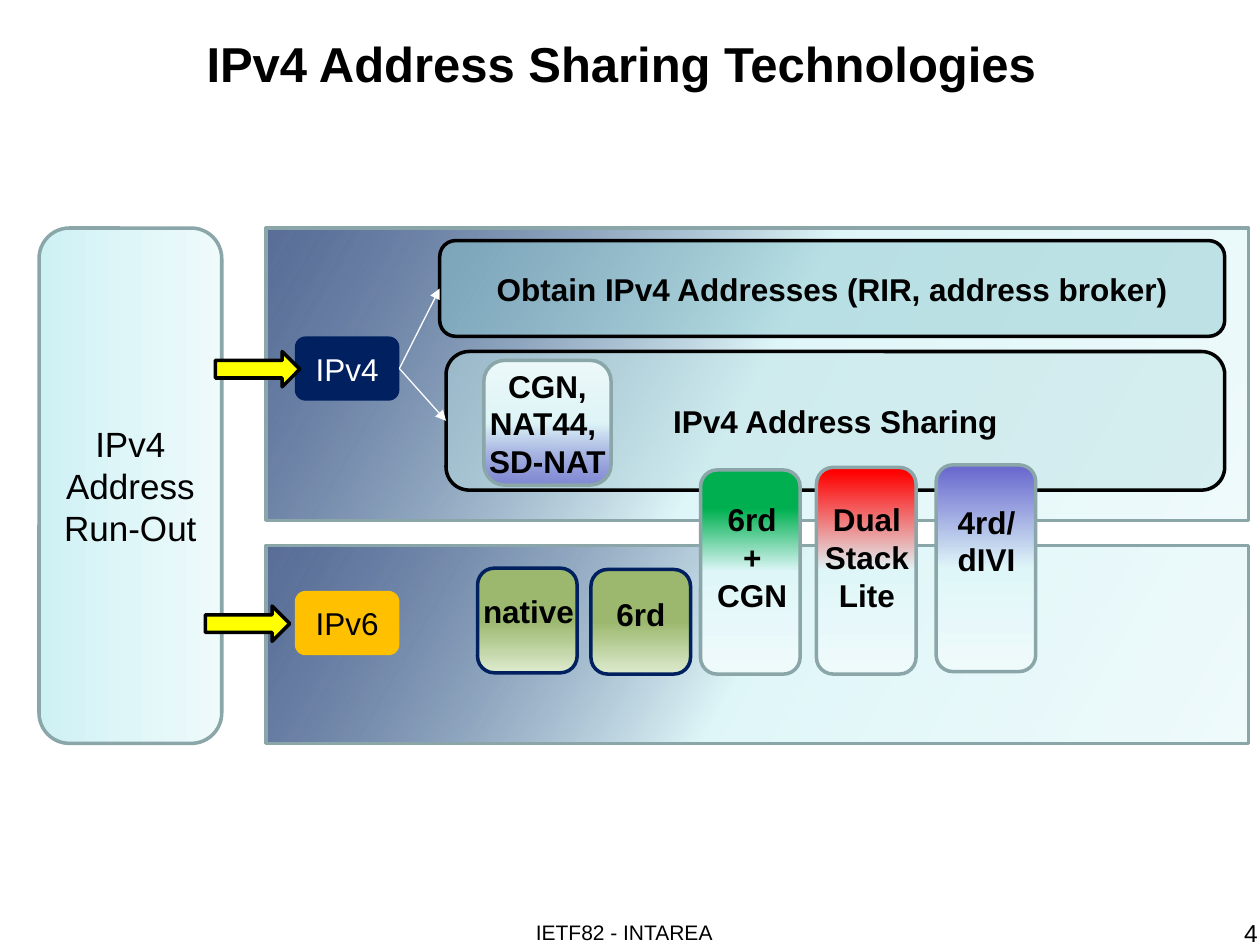
from lxml.etree import SubElement
from pptx import Presentation
from pptx.dml.color import RGBColor
from pptx.enum.shapes import MSO_CONNECTOR as CONN, MSO_SHAPE as SHAPE
from pptx.enum.text import MSO_ANCHOR as ANCHOR, PP_ALIGN as ALIGN
from pptx.oxml.ns import qn
from pptx.util import Inches, Pt

BLACK, WHITE, NAVY, YELLOW, EDGE = "000000", "FFFFFF", "002060", "FFFF00", "8AA6A8"
PALE = [(50, "DFF6F8"), (100, "EFFAFB")]
GREEN = [(50, "9CB86E"), (100, "DDEBCF"), (100, "156B13")]


def rgb(value):
    return RGBColor.from_string(value)


def set_alpha(color, percent):
    SubElement(color, qn("a:alpha"), val=str(percent * 1000))


class Deck:
    font = "Arial"
    border = 2

    def __init__(self, width, height):
        self.prs = Presentation()
        self.prs.slide_width, self.prs.slide_height = Inches(width), Inches(height)
        self.s = self.prs.slides.add_slide(self.prs.slide_layouts[6])

    def label(self, sp, text, size, bold, color=BLACK, align=ALIGN.CENTER,
              anchor=ANCHOR.MIDDLE, wrap=True):
        tf = sp.text_frame
        tf.word_wrap = wrap
        tf.vertical_anchor = anchor
        tf.text = text
        for p in tf.paragraphs:
            p.alignment = align
            p.font.name, p.font.size, p.font.bold = self.font, Pt(size), bold
            p.font.color.rgb = rgb(color)

    def text(self, at, text, size=18, bold=True, **style):
        sp = self.s.shapes.add_textbox(*map(Inches, at))
        self.label(sp, text, size, bold, **{"anchor": ANCHOR.TOP, **style})
        return sp

    def shape(self, at, line=None, kind=SHAPE.ROUNDED_RECTANGLE):
        sp = self.s.shapes.add_shape(kind, *map(Inches, at))
        sp.shadow.inherit = False
        if line:
            sp.line.color.rgb = rgb(line)
            sp.line.width = Pt(self.border)
        else:
            sp.line.fill.background()
        return sp

    def solid(self, at, fill, line=None, alpha=None, **kind):
        sp = self.shape(at, line, **kind)
        sp.fill.solid()
        sp.fill.fore_color.rgb = rgb(fill)
        if alpha:
            set_alpha(sp._element.spPr.find(qn("a:solidFill"))[0], alpha)
        return sp

    def gradient(self, at, stops, angle, line=EDGE, **kind):
        sp = self.shape(at, line, **kind)
        sp.fill.gradient()
        grad = sp._element.spPr.find(qn("a:gradFill"))
        grad.find(qn("a:lin")).set("ang", str(angle * 60000))
        stop_list = grad.find(qn("a:gsLst"))
        for old in list(stop_list):
            stop_list.remove(old)
        for position, color, *alpha in stops:
            gs = SubElement(stop_list, qn("a:gs"), pos=str(position * 1000))
            clr = SubElement(gs, qn("a:srgbClr"), val=str(rgb(color)))
            if alpha:
                set_alpha(clr, alpha[0])
        return sp

    def arrow(self, start, end, color=WHITE, width=0.75):
        c = self.s.shapes.add_connector(CONN.STRAIGHT, 0, 0, 0, 0)
        c.begin_connect(start, 3)
        c.end_connect(end, 1)
        c.line.color.rgb = rgb(color)
        c.line.width = Pt(width)
        SubElement(c.line._get_or_add_ln(), qn("a:tailEnd"), type="triangle")
        SubElement(c._element.spPr, qn("a:effectLst"))


def main():
    deck = Deck(10, 7.5)
    deck.text((0.39, 0, 9.08, 1), "IPv4 Address Sharing Technologies", 28,
              anchor=ANCHOR.MIDDLE)

    run_out = deck.gradient((0.31, 1.81, 1.45, 4.09), [(0, "CEF1F4")] + PALE, 0)
    deck.label(run_out, "IPv4 Address\nRun-Out", 20, False)

    for top, height in ((1.81, 2.32), (4.33, 1.57)):
        deck.gradient((2.11, top, 7.8, height), [(0, NAVY, 65)] + PALE, 30,
                      kind=SHAPE.RECTANGLE)

    ipv4 = deck.solid((2.34, 2.67, 0.83, 0.51), NAVY)
    deck.label(ipv4, "IPv4", 18, False, WHITE)
    ipv6 = deck.solid((2.34, 4.69, 0.83, 0.51), "FFC000")
    deck.label(ipv6, "IPv6", 18, False)
    for left, top in ((1.71, 2.79), (1.63, 4.81)):
        deck.solid((left, top, 0.67, 0.28), YELLOW, BLACK, kind=SHAPE.RIGHT_ARROW)

    options = (
        ((3.49, 1.91, 6.23, 0.76), "8AC6CD", "Obtain IPv4 Addresses (RIR, address broker)"),
        ((3.54, 2.79, 6.18, 1.1), "BBE0E3", "IPv4 Address Sharing"),
    )
    for at, fill, name in options:
        option = deck.solid(at, fill, BLACK, alpha=46)
        deck.label(option, name, 18, True)
        deck.arrow(ipv4, option)

    nat = deck.gradient((3.84, 2.86, 1.01, 0.99), [(0, "6B6BCF", 73)] + PALE, 270)
    nat_label = deck.text((3.73, 2.86, 1.23, 1.01), "CGN, NAT44, \vSD-NAT")
    deck.s.shapes.add_group_shape([nat, nat_label])

    cards = (
        ((3.79, 4.51, 0.79, 0.83), GREEN, NAVY, (3.73, 4.65, 0.93, 0.4), "native", False),
        ((4.69, 4.52, 0.79, 0.83), GREEN, NAVY, (4.79, 4.67, 0.59, 0.4), "6rd", False),
        ((5.56, 3.73, 0.79, 1.62), [(19, "00B050")] + PALE, EDGE,
         (5.59, 3.92, 0.76, 1.01), "6rd\v+\nCGN", False),
        ((6.48, 3.71, 0.79, 1.64), [(2, "FF0000")] + PALE, EDGE,
         (6.44, 3.92, 0.88, 1.01), "Dual\vStack\nLite", True),
        ((7.43, 3.69, 0.79, 1.64), [(2, "6B6BCF")] + PALE, EDGE,
         (7.39, 3.94, 0.88, 0.71), "4rd/\vdIVI", True),
    )
    for at, stops, line, name_at, name, wrap in cards:
        deck.gradient(at, stops, 90, line)
        deck.text(name_at, name, wrap=wrap)

    deck.text((7.75, 7.24, 2.33, 0.52), "4", 14, False, align=ALIGN.RIGHT)
    deck.text((3.08, 7.25, 3.75, 0.52), "IETF82 - INTAREA", 12, False)
    deck.prs.save("out.pptx")


if __name__ == "__main__":
    main()
